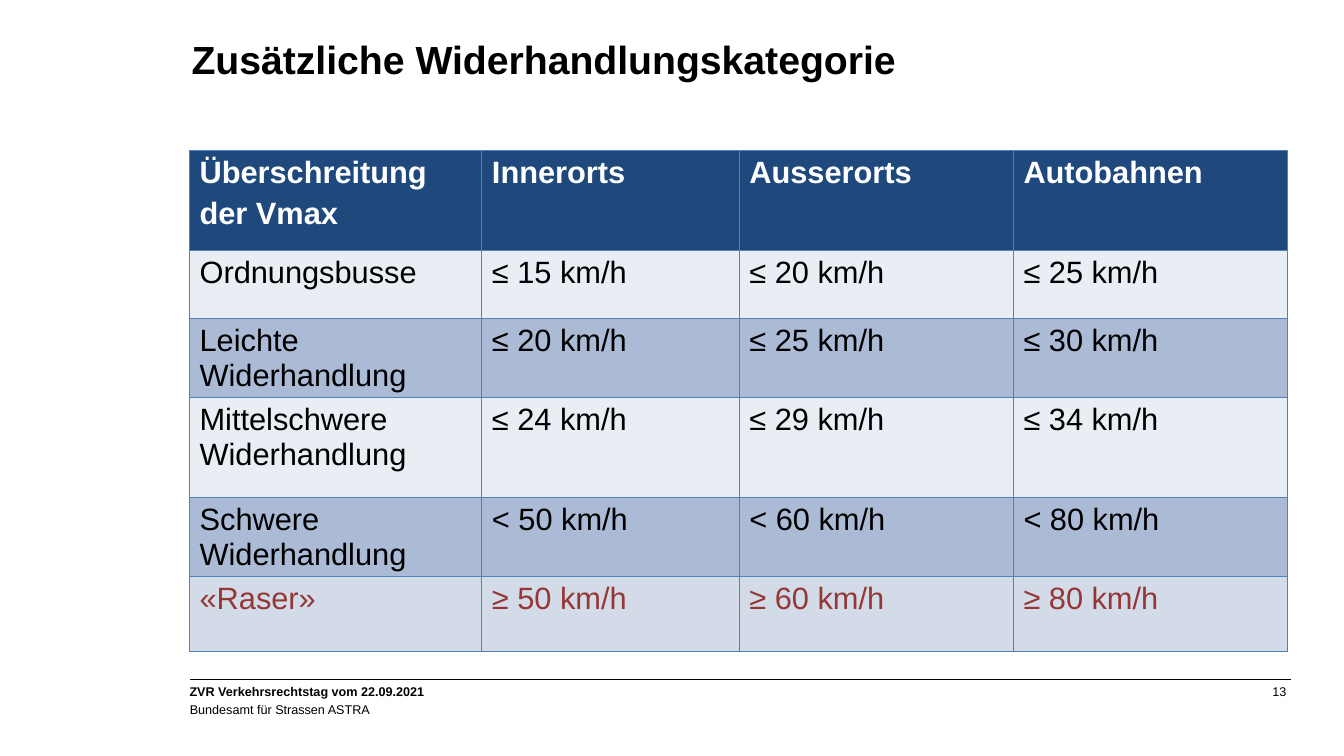
"""Build the slide on the additional category of speeding offences."""
from dataclasses import dataclass

from lxml import etree
from pptx import Presentation
from pptx.dml.color import RGBColor
from pptx.enum import shapes, text
from pptx.oxml import ns
from pptx.util import Pt

BLACK = RGBColor(0x00, 0x00, 0x00)
WHITE = RGBColor(0xFF, 0xFF, 0xFF)
NAVY = RGBColor(0x1F, 0x49, 0x7D)
PALE = RGBColor(0xE9, 0xED, 0xF4)
MID = RGBColor(0xAB, 0xBA, 0xD5)
SOFT = RGBColor(0xD3, 0xDB, 0xE9)
DARK_RED = RGBColor(0x95, 0x37, 0x35)
BORDER = RGBColor(0x4F, 0x81, 0xBD)

COLUMN_WIDTHS = (208.8, 183.9, 195.8, 195.8)


@dataclass(frozen=True)
class Category:
    labels: tuple[str, ...]
    height: float
    fill: RGBColor
    color: RGBColor = BLACK
    bold: bool = False


@dataclass(frozen=True)
class FooterText:
    wording: str
    box: tuple[float, float, float, float]
    margins: tuple[float, float, float, float]
    bold: bool = False
    align: text.PP_ALIGN = text.PP_ALIGN.LEFT
    outline: shapes.MSO_SHAPE | None = None
    anchor: text.MSO_ANCHOR = text.MSO_ANCHOR.TOP
    line_spacing: float = 1.0


CATEGORIES = (
    Category(("Überschreitung\nder Vmax", "Innerorts", "Ausserorts", "Autobahnen"),
             71.3, NAVY, WHITE, True),
    Category(("Ordnungsbusse", "≤ 15 km/h", "≤ 20 km/h", "≤ 25 km/h"), 49, PALE),
    Category(("Leichte Widerhandlung", "≤ 20 km/h", "≤ 25 km/h", "≤ 30 km/h"), 52.6, MID),
    Category(("Mittelschwere Widerhandlung", "≤ 24 km/h", "≤ 29 km/h", "≤ 34 km/h"),
             71.3, PALE),
    Category(("Schwere Widerhandlung", "< 50 km/h", "< 60 km/h", "< 80 km/h"), 55.4, MID),
    Category(("«Raser»", "≥ 50 km/h", "≥ 60 km/h", "≥ 80 km/h"), 53.3, SOFT, DARK_RED),
)

FOOTER = (
    FooterText("Bundesamt für Strassen ASTRA", (133.2, 498.2, 371.5, 16.6), (0, 0, 0, 0),
               outline=shapes.MSO_SHAPE.OCTAGON, anchor=text.MSO_ANCHOR.MIDDLE,
               line_spacing=1.05),
    FooterText("ZVR Verkehrsrechtstag vom 22.09.2021", (135.4, 485.3, 571.7, 28.8),
               (0, 3.6, 7.2, 3.6), bold=True),
    FooterText("13", (702, 485.3, 223.9, 37.4), (7.2, 3.6, 7.2, 3.6),
               align=text.PP_ALIGN.RIGHT),
)


def format_text(frame, size: float, color: RGBColor, bold: bool) -> None:
    font_values = {"name": "Arial", "size": Pt(size), "bold": bold}
    for index, paragraph in enumerate(frame.paragraphs):
        if index:
            paragraph.space_before = Pt(size * 0.2)
        for run in paragraph.runs:
            for key, value in font_values.items():
                setattr(run.font, key, value)
            run.font.color.rgb = color


def format_frame(frame, margins: tuple[float, ...], anchor: text.MSO_ANCHOR) -> None:
    values = dict(zip(("margin_left", "margin_top", "margin_right", "margin_bottom"),
                      map(Pt, margins)))
    values |= {"word_wrap": True, "auto_size": text.MSO_AUTO_SIZE.NONE,
               "vertical_anchor": anchor}
    for key, value in values.items():
        setattr(frame, key, value)


def add_cell_borders(cell) -> None:
    properties = cell._tc.get_or_add_tcPr()
    for side in ("a:lnL", "a:lnR", "a:lnT", "a:lnB"):
        border = etree.SubElement(properties, ns.qn(side), w=str(Pt(1)))
        fill = etree.SubElement(border, ns.qn("a:solidFill"))
        etree.SubElement(fill, ns.qn("a:srgbClr"), val=str(BORDER))


def add_title(slide) -> None:
    title = slide.shapes.title
    title.left, title.top, title.width, title.height = map(Pt, (136.8, 25.2, 782.6, 77.8))
    title.text_frame.text = "Zusätzliche Widerhandlungskategorie"
    format_frame(title.text_frame, (0, 0, 0, 0), text.MSO_ANCHOR.TOP)
    title.text_frame.paragraphs[0].alignment = text.PP_ALIGN.LEFT
    format_text(title.text_frame, 28, BLACK, True)


def add_speed_table(slide) -> None:
    height = sum(category.height for category in CATEGORIES)
    table = slide.shapes.add_table(
        len(CATEGORIES), len(COLUMN_WIDTHS), Pt(135.4), Pt(107.5),
        Pt(sum(COLUMN_WIDTHS)), Pt(height)).table
    for column, width in zip(table.columns, COLUMN_WIDTHS):
        column.width = Pt(width)
    for row, category in zip(table.rows, CATEGORIES):
        row.height = Pt(category.height)
        for cell, label in zip(row.cells, category.labels):
            add_cell_borders(cell)
            cell.fill.solid()
            cell.fill.fore_color.rgb = category.fill
            cell.text = label
            format_text(cell.text_frame, 22, category.color, category.bold)


def add_footer_text(slide, footer: FooterText) -> None:
    box = map(Pt, footer.box)
    if footer.outline is None:
        shape = slide.shapes.add_textbox(*box)
    else:
        shape = slide.shapes.add_shape(footer.outline, *box)
        shape.shadow.inherit = False
        shape.fill.background()
        shape.line.fill.background()
    frame = shape.text_frame
    frame.text = footer.wording
    format_frame(frame, footer.margins, footer.anchor)
    frame.paragraphs[0].alignment = footer.align
    frame.paragraphs[0].line_spacing = footer.line_spacing
    format_text(frame, 9, BLACK, footer.bold)


def add_footer_rule(slide) -> None:
    rule = slide.shapes.add_connector(
        shapes.MSO_CONNECTOR.STRAIGHT, Pt(922.3), Pt(485.3), Pt(135.4), Pt(485.3))
    rule.line.color.rgb = BLACK
    rule.line.width = Pt(0.75)
    etree.SubElement(rule._element.spPr, ns.qn("a:effectLst"))


def main() -> None:
    deck = Presentation()
    deck.slide_width, deck.slide_height = Pt(960), Pt(540)
    slide = deck.slides.add_slide(deck.slide_layouts[5])
    add_title(slide)
    add_footer_rule(slide)
    for footer in FOOTER:
        add_footer_text(slide, footer)
    add_speed_table(slide)
    deck.save("out.pptx")


if __name__ == "__main__":
    main()
